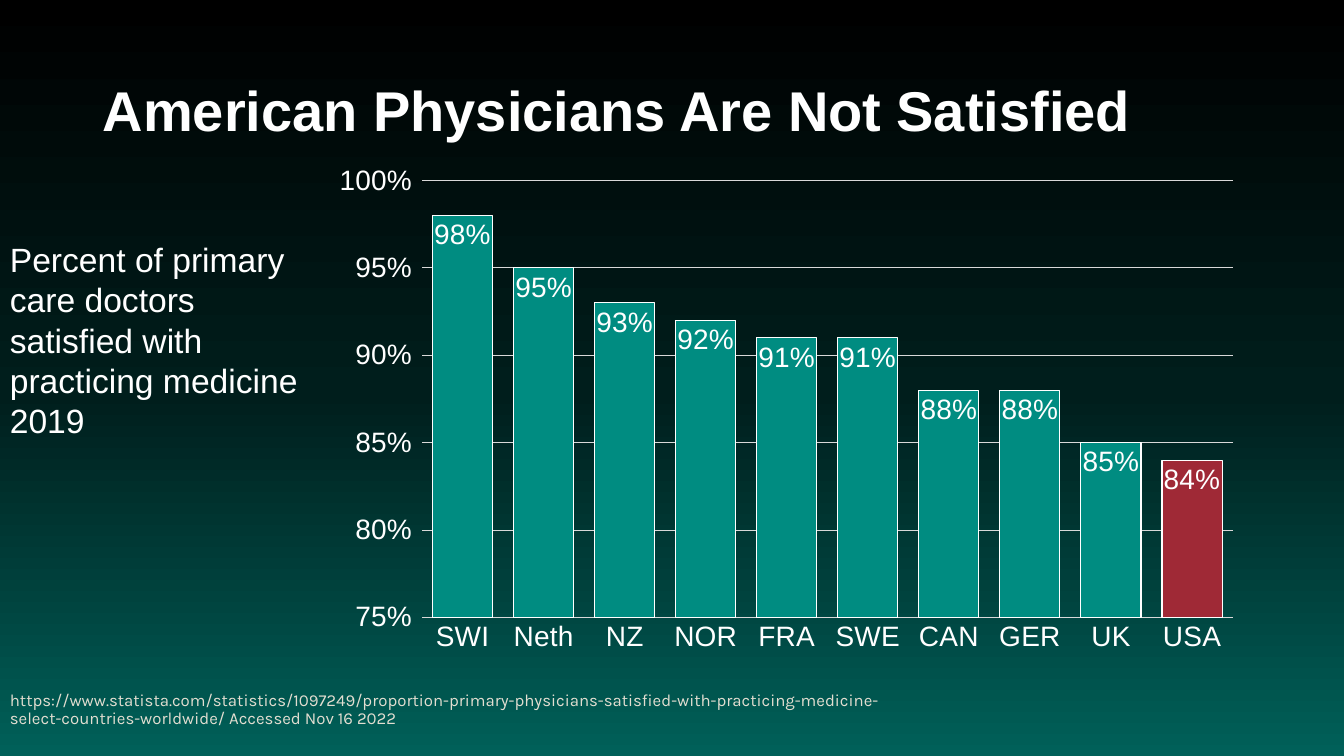
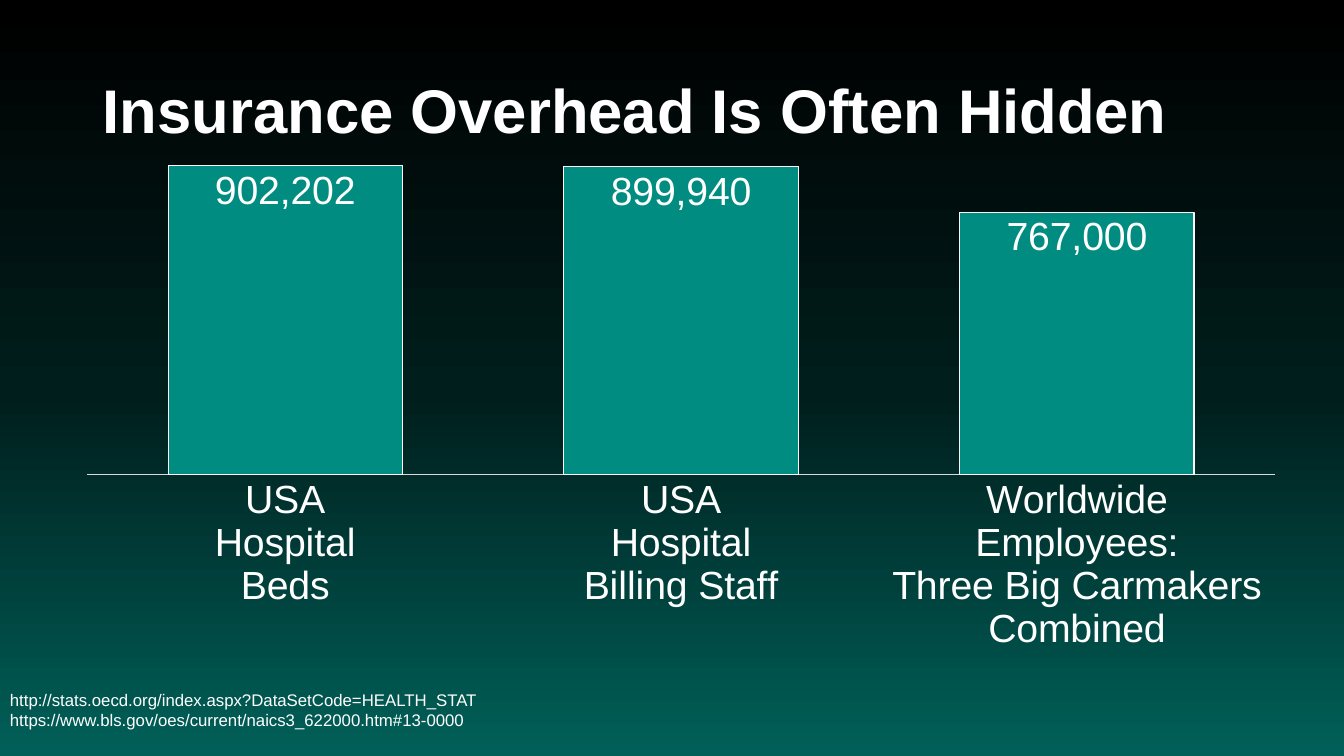
from copy import deepcopy
from dataclasses import dataclass, field
from typing import Any, Optional

from pptx import Presentation
from pptx.chart import data as chart_data
from pptx.dml import color
from pptx.enum import chart as chart_enum
from pptx.enum import text
from pptx.util import Inches, Pt

COLORS = {
    "white": "FFFFFF",
    "cream": "E3DED1",
    "rule": "D9D9D9",
    "teal": "008C81",
    "red": "9F2936",
}
BACKGROUND_STOPS = [(0, "000000"), (0.52, "001E1C"), (1, "006059")]
FONT = "Arial"
TITLE_ONLY = 5


@dataclass
class Box:
    left: float
    top: float
    width: float
    height: float

    def lengths(self) -> tuple:
        return tuple(Inches(n) for n in (self.left, self.top, self.width, self.height))


@dataclass
class TextStyle:
    size: float
    color: str = "white"
    name: str = FONT
    bold: bool = False
    line_spacing: float = 1.0
    anchor: Any = text.MSO_ANCHOR.MIDDLE


@dataclass
class ColumnChart:
    box: Box
    plot: Box
    columns: dict
    size: float
    gap_width: int
    number_format: str
    value_axis: dict
    show_value_axis: bool = True
    highlights: dict = field(default_factory=dict)


@dataclass
class Page:
    title: str
    title_size: float
    source: list
    source_style: TextStyle
    chart: ColumnChart
    caption: Optional[list] = None


TITLE_BOX = Box(0.92, 0.4, 11.5, 1.45)
SOURCE_BOX = Box(0, 6.58, 9, 0.92)
CAPTION_BOX = Box(0, 2.32, 3.17, 2.12)
CAPTION_STYLE = TextStyle(24, anchor=text.MSO_ANCHOR.TOP)

PAGES = [
    Page(
        title="American Physicians Are Not Satisfied",
        title_size=40,
        source=[
            "https://www.statista.com/statistics/1097249/proportion-primary-physicians-"
            "satisfied-with-practicing-medicine-select-countries-worldwide/ "
            "Accessed Nov 16 2022"
        ],
        source_style=TextStyle(12, "cream", "Karla", line_spacing=0.9),
        caption=[
            "Percent of primary care doctors satisfied with practicing medicine",
            "2019",
        ],
        chart=ColumnChart(
            box=Box(3.17, 1.54, 9.24, 5.04),
            plot=Box(0.11, 0.05, 0.87, 0.86),
            columns={
                "SWI": 0.98, "Neth": 0.95, "NZ": 0.93, "NOR": 0.92, "FRA": 0.91,
                "SWE": 0.91, "CAN": 0.88, "GER": 0.88, "UK": 0.85, "USA": 0.84,
            },
            size=20,
            gap_width=35,
            number_format="0%",
            value_axis={"minimum_scale": 0.75, "maximum_scale": 1, "major_unit": 0.05},
            highlights={"USA": "red"},
        ),
    ),
    Page(
        title="Insurance Overhead Is Often Hidden",
        title_size=44,
        source=[
            "http://stats.oecd.org/index.aspx?DataSetCode=HEALTH_STAT",
            "https://www.bls.gov/oes/current/naics3_622000.htm#13-0000",
        ],
        source_style=TextStyle(12),
        chart=ColumnChart(
            box=Box(0.62, 1.38, 12.27, 5.2),
            plot=Box(0.02, 0.02, 0.96, 0.62),
            columns={
                "USA\nHospital\nBeds": 902202,
                "USA\nHospital\nBilling Staff": 899940,
                "Worldwide Employees:\nThree Big Carmakers Combined": 767000,
            },
            size=28,
            gap_width=69,
            number_format="#,##0",
            value_axis={"minimum_scale": 0, "maximum_scale": 950000, "major_unit": 250000},
            show_value_axis=False,
        ),
    ),
]


def rgb(name: str) -> color.RGBColor:
    return color.RGBColor.from_string(COLORS[name])


def set_attributes(target: Any, values: dict) -> None:
    for name, value in values.items():
        setattr(target, name, value)


def format_font(font: Any, style: TextStyle) -> None:
    set_attributes(font, {"name": style.name, "size": Pt(style.size), "bold": style.bold})
    font.color.rgb = rgb(style.color)


def format_line(line: Any, name: str) -> None:
    line.color.rgb = rgb(name)
    line.width = Pt(0.75)


def paint_background(master: Any) -> None:
    fill = master.background.fill
    fill.gradient()
    fill.gradient_angle = 270
    stop_list = master.element.xpath(".//p:bg//a:gsLst")[0]
    stop_list.insert(1, deepcopy(stop_list[0]))
    for stop, (position, value) in zip(fill.gradient_stops, BACKGROUND_STOPS):
        stop.position = position
        stop.color.rgb = color.RGBColor.from_string(value)


def write_text(shape: Any, lines: list, style: TextStyle) -> None:
    frame = shape.text_frame
    set_attributes(frame, {
        "text": "\n".join(lines),
        "word_wrap": True,
        "auto_size": text.MSO_AUTO_SIZE.NONE,
        "vertical_anchor": style.anchor,
    })
    for paragraph in frame.paragraphs:
        set_attributes(paragraph, {
            "alignment": text.PP_ALIGN.LEFT,
            "line_spacing": style.line_spacing,
        })
        format_font(paragraph.font, style)


def add_text(slide: Any, box: Box, lines: list, style: TextStyle) -> None:
    write_text(slide.shapes.add_textbox(*box.lengths()), lines, style)


def add_title(slide: Any, title: str, size: float) -> None:
    shape = slide.shapes.title
    lengths = TITLE_BOX.lengths()
    set_attributes(shape, dict(zip(("left", "top", "width", "height"), lengths)))
    write_text(shape, [title], TextStyle(size, bold=True, line_spacing=0.9))


def place_plot(chart: Any, plot: Box) -> None:
    plot_area = chart.element.xpath(".//c:plotArea")[0]
    for old_layout in plot_area.xpath("./c:layout"):
        plot_area.remove(old_layout)
    namespace = plot_area.nsmap["c"]
    layout = plot_area.makeelement(f"{{{namespace}}}layout")
    manual = layout.makeelement(f"{{{namespace}}}manualLayout")
    layout.append(manual)
    settings = {
        "layoutTarget": "inner", "xMode": "edge", "yMode": "edge",
        "x": plot.left, "y": plot.top, "w": plot.width, "h": plot.height,
    }
    for tag, value in settings.items():
        manual.append(manual.makeelement(f"{{{namespace}}}{tag}", {"val": str(value)}))
    plot_area.insert(0, layout)


def add_column_chart(slide: Any, column_chart: ColumnChart) -> None:
    data = chart_data.CategoryChartData(number_format=column_chart.number_format)
    data.categories = list(column_chart.columns)
    data.add_series("Series 1", list(column_chart.columns.values()))
    chart = slide.shapes.add_chart(
        chart_enum.XL_CHART_TYPE.COLUMN_CLUSTERED, *column_chart.box.lengths(), data
    ).chart
    set_attributes(chart, {"has_legend": False, "has_title": False})
    style = TextStyle(column_chart.size)
    format_font(chart.font, style)
    place_plot(chart, column_chart.plot)

    category_axis = chart.category_axis
    category_axis.major_tick_mark = chart_enum.XL_TICK_MARK.NONE
    format_line(category_axis.format.line, "rule")
    format_font(category_axis.tick_labels.font, style)

    value_axis = chart.value_axis
    set_attributes(value_axis, column_chart.value_axis)
    set_attributes(value_axis, {
        "visible": column_chart.show_value_axis,
        "has_major_gridlines": column_chart.show_value_axis,
        "major_tick_mark": chart_enum.XL_TICK_MARK.OUTSIDE,
    })
    value_axis.format.line.fill.background()
    if column_chart.show_value_axis:
        format_line(value_axis.major_gridlines.format.line, "rule")
        format_font(value_axis.tick_labels.font, style)
        set_attributes(value_axis.tick_labels, {
            "number_format": column_chart.number_format,
            "number_format_is_linked": False,
        })

    plot = chart.plots[0]
    set_attributes(plot, {
        "gap_width": column_chart.gap_width,
        "overlap": -27,
        "vary_by_categories": False,
        "has_data_labels": True,
    })
    set_attributes(plot.data_labels, {
        "show_value": True,
        "position": chart_enum.XL_LABEL_POSITION.INSIDE_END,
        "number_format": column_chart.number_format,
        "number_format_is_linked": False,
    })
    format_font(plot.data_labels.font, style)

    series = plot.series[0]
    series.invert_if_negative = False
    fills = [(series, "teal")]
    categories = list(column_chart.columns)
    for category, name in column_chart.highlights.items():
        fills.append((series.points[categories.index(category)], name))
    for target, name in fills:
        target.format.fill.solid()
        target.format.fill.fore_color.rgb = rgb(name)
        format_line(target.format.line, "white")


def add_page(presentation: Any, page: Page) -> None:
    slide = presentation.slides.add_slide(presentation.slide_layouts[TITLE_ONLY])
    add_title(slide, page.title, page.title_size)
    add_text(slide, SOURCE_BOX, page.source, page.source_style)
    if page.caption:
        add_text(slide, CAPTION_BOX, page.caption, CAPTION_STYLE)
    add_column_chart(slide, page.chart)


def main() -> None:
    presentation = Presentation()
    set_attributes(presentation, {"slide_width": Inches(13.33), "slide_height": Inches(7.5)})
    paint_background(presentation.slide_master)
    for page in PAGES:
        add_page(presentation, page)
    presentation.save("out.pptx")


if __name__ == "__main__":
    main()
